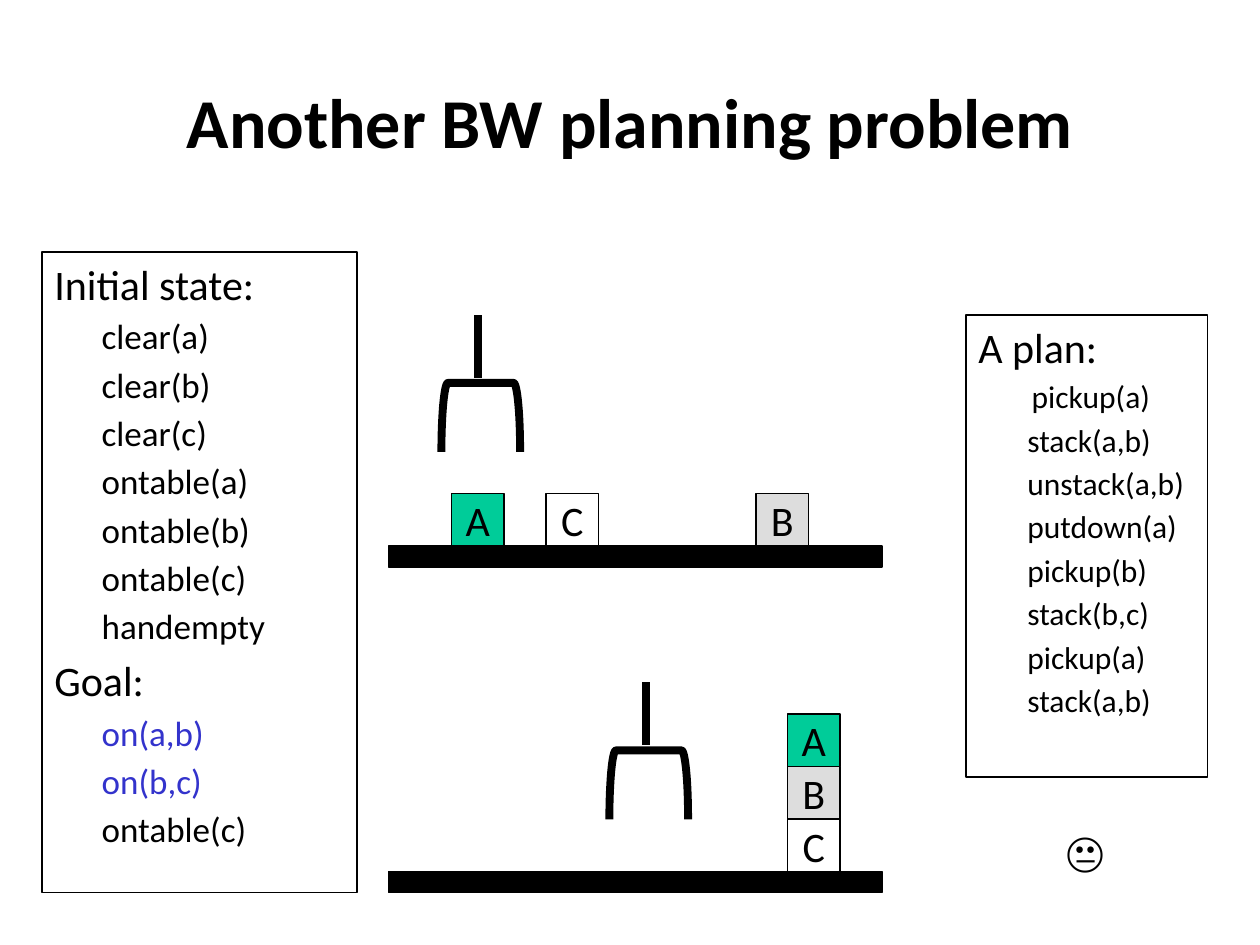
from lxml import etree
from pptx import Presentation
from pptx.dml.color import RGBColor
from pptx.enum.shapes import MSO_CONNECTOR, MSO_SHAPE
from pptx.enum.text import MSO_ANCHOR, PP_ALIGN
from pptx.oxml.ns import qn
from pptx.util import Pt

RECT, CLAW = MSO_SHAPE.RECTANGLE, MSO_SHAPE.RIGHT_BRACKET
LINE = MSO_CONNECTOR.STRAIGHT
TOP, MID = MSO_ANCHOR.TOP, MSO_ANCHOR.MIDDLE
LEFT, MIDDLE = PP_ALIGN.LEFT, PP_ALIGN.CENTER

HEX = {"ink": "000000", "goal": "3333CC", "A": "00CC99", "B": "DDDDDD", "C": None}
RGB = {name: RGBColor.from_string(code) for name, code in HEX.items() if code}


def write(frame, text, size=24, color="ink", font="Calibri", bold=False,
          align=LEFT, anchor=TOP, wrap=True, indent=0, first=False):
    """Add one paragraph; first=True fills the frame's opening paragraph."""
    frame.word_wrap = wrap
    frame.vertical_anchor = anchor
    para = frame.paragraphs[0] if first else frame.add_paragraph()
    para.alignment = align
    if not first:
        para.space_before = Pt(round(size * 0.18, 1))
    if indent:
        para._p.get_or_add_pPr().set("marL", str(Pt(indent)))
    run = para.add_run()
    run.text = text
    run.font.name, run.font.size, run.font.bold = font, Pt(size), bold
    run.font.color.rgb = RGB[color]


def draw(shapes, kind, x, y, w, h, fill=None, line=0.75):
    shape = shapes.add_shape(kind, Pt(x), Pt(y), Pt(w), Pt(h))
    shape.shadow.inherit = False
    if fill:
        shape.fill.solid()
        shape.fill.fore_color.rgb = RGB[fill]
    else:
        shape.fill.background()
    shape.line.color.rgb = RGB["ink"]
    shape.line.width = Pt(line)
    return shape


prs = Presentation()
prs.slide_width, prs.slide_height = Pt(720), Pt(540)
slide = prs.slides.add_slide(prs.slide_layouts[6])

title = slide.shapes.add_textbox(Pt(54), Pt(24), Pt(612), Pt(90))
write(title.text_frame, "Another BW planning problem", size=40, bold=True,
      align=MIDDLE, anchor=MID, first=True)

# Initial state and goal
state = draw(slide.shapes, RECT, 24, 144, 180, 366).text_frame
write(state, "Initial state:", first=True)
for fact in ("clear(a)", "clear(b)", "clear(c)", "ontable(a)", "ontable(b)",
             "ontable(c)", "handempty"):
    write(state, fact, size=20, indent=27)
write(state, "Goal:")
for fact, color in (("on(a,b)", "goal"), ("on(b,c)", "goal"), ("ontable(c)", "ink")):
    write(state, fact, size=20, color=color, indent=27)

# Each scene: table top, hand line x and y, blocks as (name, x, rows above table)
SIDE = 30
scenes = (
    (312, 273, 180, (("A", 258, 1), ("B", 432, 1), ("C", 312, 1))),
    (498, 369, 390, (("A", 450, 3), ("B", 450, 2), ("C", 450, 1))),
)
for table, hand, top, blocks in scenes:
    group = slide.shapes.add_group_shape().shapes
    draw(group, RECT, 222, table, 282, 12, fill="ink")
    for name, x, row in blocks:
        block = draw(group, RECT, x, table - row * SIDE, SIDE, SIDE,
                     fill=name if HEX[name] else None)
        write(block.text_frame, name, align=MIDDLE, anchor=MID, wrap=False, first=True)
    claw = draw(group, CLAW, hand - 18, top + 36, 39.5, 45, line=4.5)
    claw.adjustments[0] = 0.095
    claw.rotation = 270
    arm = group.add_connector(LINE, Pt(hand), Pt(top), Pt(hand), Pt(top + 36))
    arm.line.color.rgb = RGB["ink"]
    arm.line.width = Pt(4.5)
    etree.SubElement(arm._element.spPr, qn("a:effectLst"))

# Plan
plan = draw(slide.shapes, RECT, 552, 180, 138, 264).text_frame
write(plan, "A plan:", first=True)
write(plan, "pickup(a)", size=18, indent=30.5)
for step in ("stack(a,b)", "unstack(a,b)", "putdown(a)", "pickup(b)",
             "stack(b,c)", "pickup(a)", "stack(a,b)"):
    write(plan, step, size=18, indent=28)

face = slide.shapes.add_textbox(Pt(602), Pt(468), Pt(39), Pt(36))
write(face.text_frame, "😐", font="Times New Roman", wrap=False, first=True)

prs.save("out.pptx")
